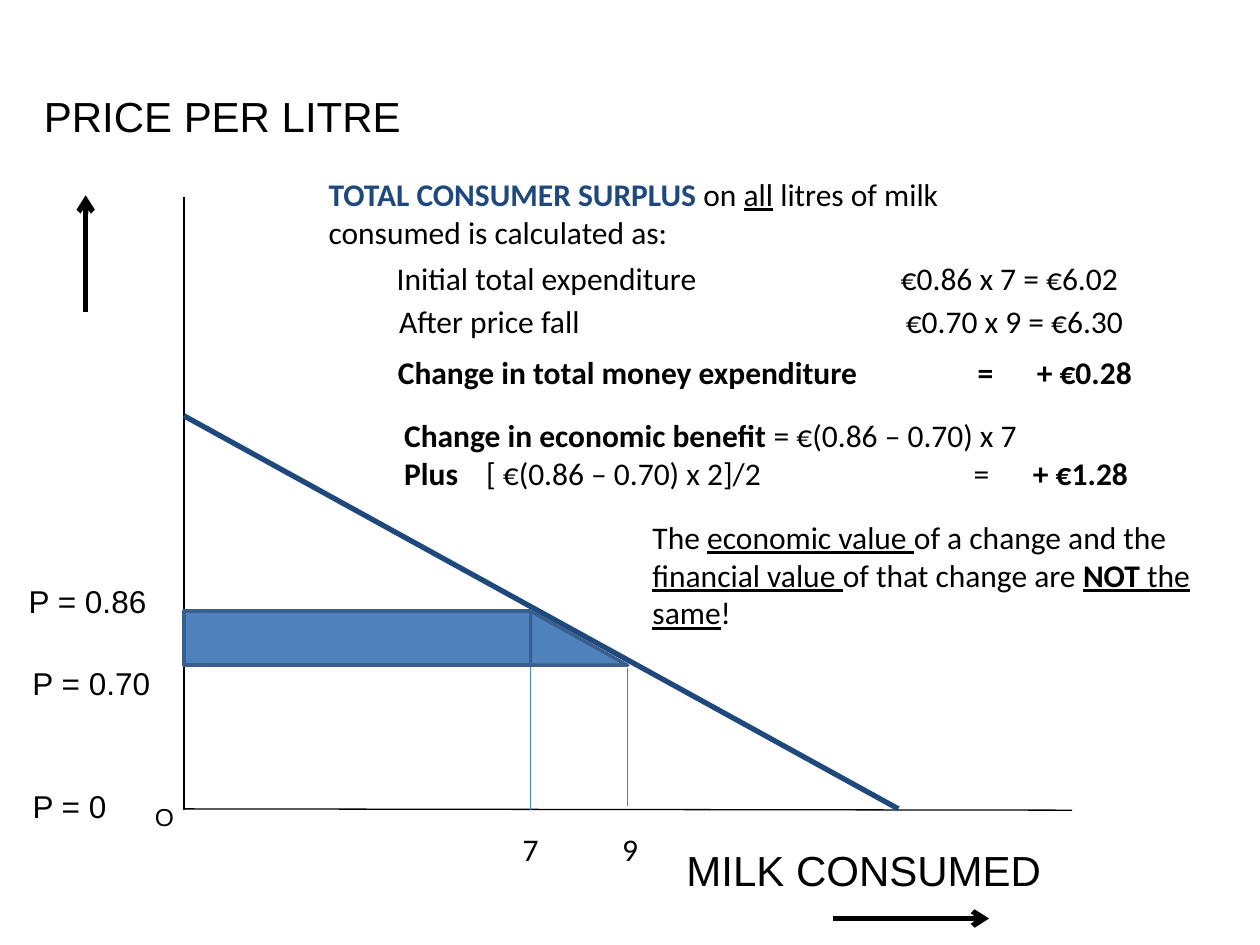
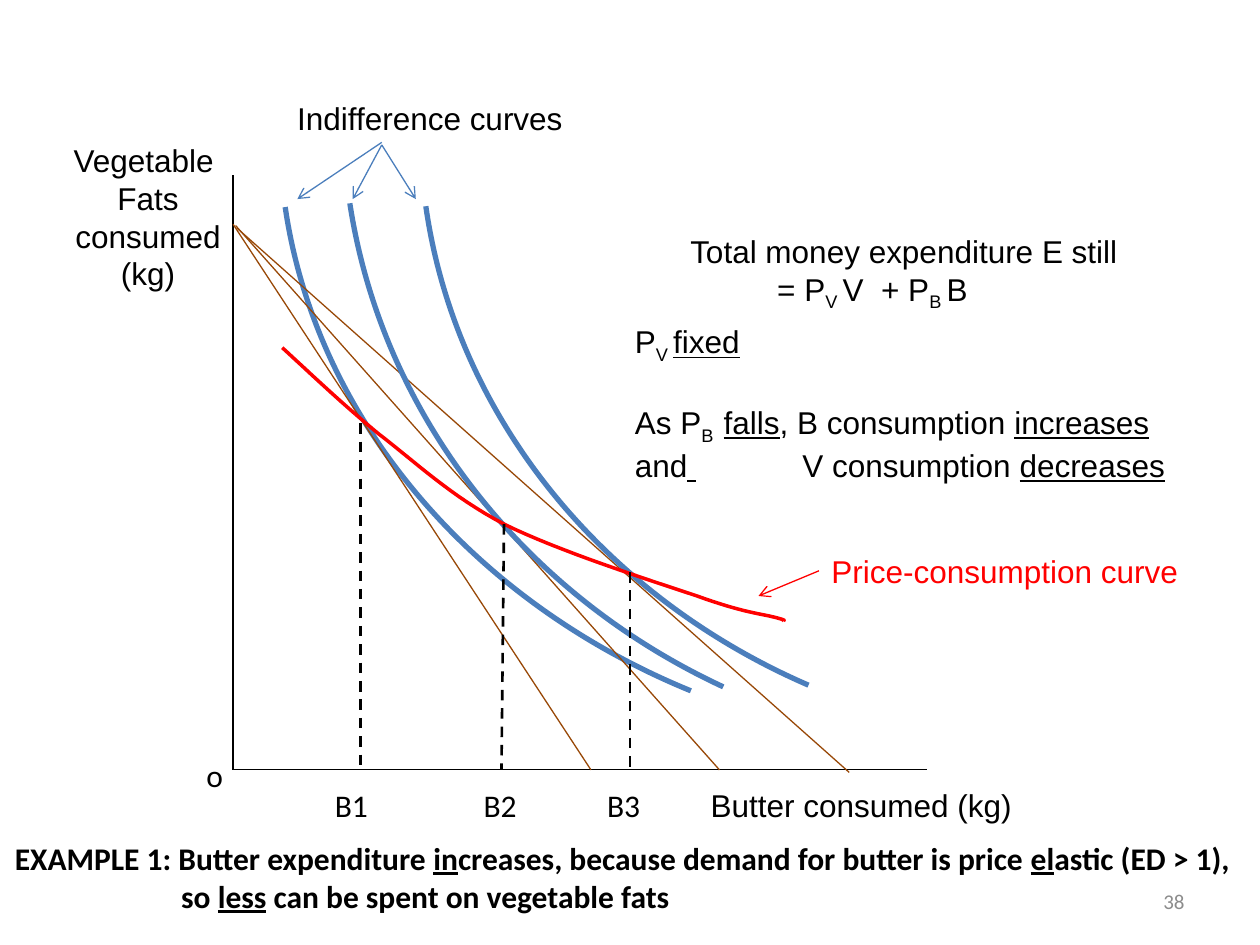
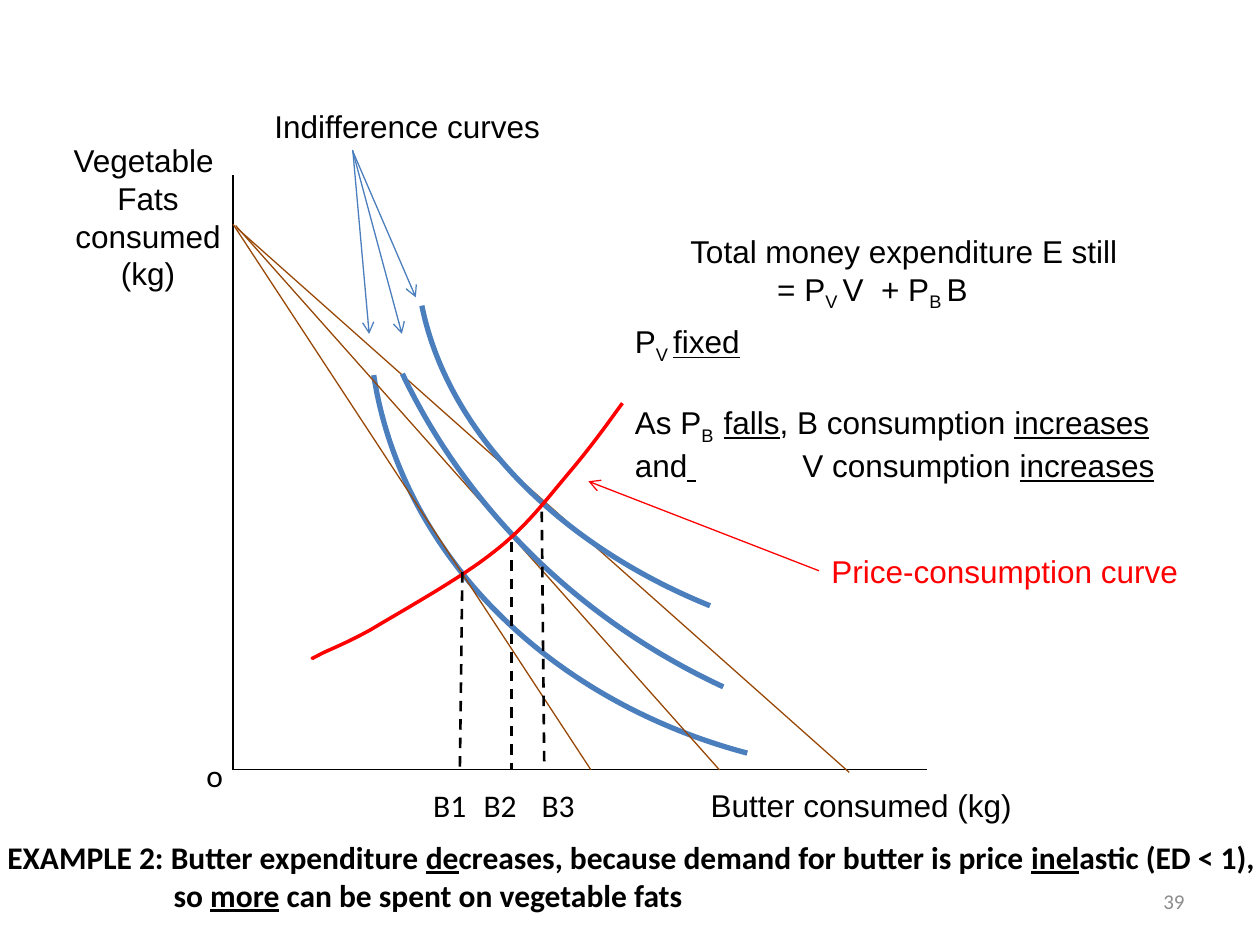
"""Draw three slides on consumer surplus and price-consumption curves."""
from lxml import etree
from pptx import Presentation
from pptx.dml.color import RGBColor
from pptx.enum.dml import MSO_LINE
from pptx.enum.shapes import MSO_CONNECTOR, MSO_SHAPE
from pptx.enum.text import MSO_ANCHOR, MSO_AUTO_SIZE, PP_ALIGN
from pptx.oxml.ns import qn
from pptx.util import Cm, Pt

DASH = MSO_LINE.DASH
STRAIGHT = MSO_CONNECTOR.STRAIGHT
ARC, BLOCK, WEDGE = MSO_SHAPE.ARC, MSO_SHAPE.RECTANGLE, MSO_SHAPE.RIGHT_TRIANGLE
MIDDLE, TOP = MSO_ANCHOR.MIDDLE, MSO_ANCHOR.TOP
GROW, FIXED = MSO_AUTO_SIZE.SHAPE_TO_FIT_TEXT, MSO_AUTO_SIZE.NONE
LEFT, CENTER, RIGHT = PP_ALIGN.LEFT, PP_ALIGN.CENTER, PP_ALIGN.RIGHT

COLORS = {
    "ink": "000000", "navy": "1F497D", "blue": "4B7EBC", "fill": "4F81BD",
    "edge": "3A5F8C", "brown": "984807", "red": "FF0000", "gray": "8C8C8C",
}
MARKS = {"*": "bold", "_": "under", "~": "sub", "^": "navy"}
SANS, BODY = "Arial", "Calibri"
BASE = 6.11
LABEL = 6.19


def inch(value):
    return Cm(value * 2.54)


def color(name):
    return RGBColor.from_string(COLORS[name])


def split(line):
    state, part = set(), ""
    for char in line:
        if char in MARKS:
            if part:
                yield part, state
            state, part = state ^ {MARKS[char]}, ""
        else:
            part += char
    if part:
        yield part, state


class Art:
    def __init__(self):
        self.deck = Presentation()
        self.deck.slide_width, self.deck.slide_height = inch(10), inch(7.5)
        self.shapes = None

    def page(self):
        self.shapes = self.deck.slides.add_slide(self.deck.slide_layouts[6]).shapes

    def text(self, at, text, size=18, font=BODY, tint="ink", align=LEFT, wrap=False,
             anchor=TOP, fit=GROW, indents=(), tabs=(), gaps=()):
        box = self.shapes.add_textbox(*map(inch, at))
        frame = box.text_frame
        frame.word_wrap, frame.auto_size, frame.vertical_anchor = wrap, fit, anchor
        for i, line in enumerate(text.split("\n")):
            para = frame.add_paragraph() if i else frame.paragraphs[0]
            para.alignment = align
            if i < len(gaps):
                para.space_before = Pt(gaps[i])
            props = para._p.get_or_add_pPr()
            if i < len(indents):
                props.set("marL", str(inch(indents[i])))
            if tabs:
                stops = etree.SubElement(props, qn("a:tabLst"))
                for stop in tabs:
                    etree.SubElement(stops, qn("a:tab"), pos=str(inch(stop)), algn="l")
            for part, state in split(line):
                run = para.add_run()
                run.text = part
                style = run.font
                style.size, style.name = Pt(size), font
                style.bold, style.underline = "bold" in state, "under" in state
                style.color.rgb = color("navy" if "navy" in state else tint)
                if "sub" in state:
                    run._r.get_or_add_rPr().set("baseline", "-25000")
        return box

    def pen(self, shape, tint, width):
        shape.line.color.rgb = color(tint)
        shape.line.width = Pt(width)

    def line(self, start, end, tint="ink", width=0.75, dash=None, arrow=False, source=None):
        link = self.shapes.add_connector(STRAIGHT, *map(inch, (*start, *end)))
        self.pen(link, tint, width)
        if dash:
            link.line.dash_style = dash
        if source:
            link.begin_connect(source, 1)
        props = link._element.spPr
        if arrow:
            etree.SubElement(props.find(qn("a:ln")), qn("a:tailEnd"), type="arrow")
        etree.SubElement(props, qn("a:effectLst"))

    def shape(self, kind, at):
        item = self.shapes.add_shape(kind, *map(inch, at))
        item.shadow.inherit = False
        item.fill.solid()
        item.fill.fore_color.rgb = color("fill")
        self.pen(item, "edge", 2)

    def arc(self, at, turn, begin, end):
        item = self.shapes.add_shape(ARC, *map(inch, at))
        item.shadow.inherit = False
        item.rotation = 180 + turn
        item.adjustments[0], item.adjustments[1] = begin, end
        item.fill.background()
        self.pen(item, "blue", 3)

    def curve(self, knots, steps=16):
        dots = []
        for i in range(0, len(knots) - 1, 3):
            a, b, c, d = knots[i:i + 4]
            for step in range(1, steps + 1):
                t = step / steps
                s = 1 - t
                dots.append(tuple(
                    inch(s**3 * p + 3 * s * s * t * q + 3 * s * t * t * r + t**3 * u)
                    for p, q, r, u in zip(a, b, c, d)))
        path = self.shapes.build_freeform(*map(inch, knots[0]))
        path.add_line_segments(dots, close=False)
        item = path.convert_to_shape()
        item.shadow.inherit = False
        item.fill.background()
        self.pen(item, "red", 2)


def surplus(art):
    art.page()
    left, high, low, seven, nine = 1.46, 4.85, 5.28, 4.21, 4.98
    art.line((left, 6.42), (8.51, 6.43))
    art.line((left, 6.43), (left, 1.56))
    art.text((1.13, 6.32, 0.35, 0.34), "O", size=14, font=SANS)
    art.text((5.35, 6.65, 4.14, 0.5), "MILK CONSUMED", size=24, font=SANS, wrap=True)
    art.text((0.25, 0.67, 3.06, 0.5), "PRICE PER LITRE", size=24, font=SANS)
    art.line((6.61, 7.29), (7.85, 7.29), width=3, arrow=True)
    art.line((0.68, 2.48), (0.68, 1.55), width=3, arrow=True)
    art.line((left, 3.3), (7.13, 6.42), tint="navy", width=3)
    for x, y, wide, price in ((0.16, 6.2, 0.79, "0"), (0.13, 4.57, 1.14, "0.86"),
                              (0.16, 5.22, 1.14, "0.70")):
        art.text((x, y, wide, 0.4), f"P = {price}", font=SANS)
    for start, end in (((left, low), (5, low)), ((left, high), (seven, high)),
                       ((nine, 5.3), (nine, 6.4)), ((seven, high), (seven, 6.43))):
        art.line(start, end, tint="blue")
    art.text((4.84, 6.54, 0.33, 0.4), "9")
    art.text((4.05, 6.54, 0.33, 0.4), "7")
    art.shape(WEDGE, (seven, high, nine - seven, low - high))
    art.shape(BLOCK, (left, high, seven - left, low - high))
    art.text((2.51, 1.34, 6.03, 0.71), "*^TOTAL CONSUMER SURPLUS ^*on _all_ litres of milk "
             "consumed is calculated as:", wrap=True)
    for at, text, tabs in (
        ((3.05, 2.01, 5.99, 0.4), "Initial total expenditure\t€0.86 x 7 = €6.02", [4]),
        ((3.07, 2.35, 6.11, 0.4), "After price fall\t€0.70 x 9 = €6.30", [4.02]),
        ((3.06, 2.75, 6.75, 0.4), "*Change in total money expenditure\t=\t+ €0.28*",
         [4.6, 5.07]),
        ((3.11, 3.25, 6.16, 0.71), "*Change in economic benefit *= €(0.86 – 0.70) x 7\n"
         "*Plus*\t[ €(0.86 – 0.70) x 2]/2\t=\t*+ €1.28*", [0.65, 4.52, 4.99]),
    ):
        art.text(at, text, wrap=True, tabs=tabs)
    art.text((5.08, 4.06, 4.55, 1.01), "The _economic value _of a change and the "
             "_financial value _of that change are _*NOT* the same_!", wrap=True)


def choice(art, page, arcs, knots, drops, names, tip, rays, title, aim, trend, note, place):
    art.page()
    art.text((7.17, 6.95, 2.33, 0.4), page, size=12, tint="gray", align=RIGHT,
             wrap=True, anchor=MIDDLE, fit=FIXED)
    art.line((1.85, 1.39), (1.85, BASE))
    art.line((1.85, BASE), (7.36, BASE))
    art.arc(*arcs[0])
    art.text((5.53, LABEL, 2.61, 0.4), "Butter consumed (kg)", font=SANS, align=CENTER)
    art.text((0.35, 1.07, 1.65, 1.31), "Vegetable \nFats\nconsumed\n(kg)", font=SANS,
             align=CENTER, wrap=True)
    art.text((1.54, 5.95, 0.34, 0.4), "o")
    for start, end in (((1.85, 1.78), (4.69, BASE)), ((1.87, 1.79), (5.71, BASE)),
                       ((1.88, 1.81), (6.74, 6.13))):
        art.line(start, end, tint="brown")
    for arc in arcs[1:]:
        art.arc(*arc)
    art.curve(knots)
    for top, foot in drops:
        art.line(top, (foot, BASE), width=1.5, dash=DASH)
    for i, x in enumerate(names, 1):
        art.text((x, LABEL, 0.47, 0.4), f"B{i}")
    for start, end in rays:
        art.line((tip, start), end, tint="blue", arrow=True)
    art.text((*title, 2.33, 0.4), "Indifference curves", font=SANS)
    label = art.text((6.5, 4.33, 2.98, 0.4), "Price-consumption curve", font=SANS, tint="red")
    art.line((6.5, 4.53), aim, tint="red", arrow=True, source=label)
    art.text((5.38, 1.79, 3.78, 0.71), "Total money expenditure E still\n"
             "= P~V ~V  + P~B ~B", font=SANS, wrap=True, indents=(0, 0.69))
    art.text((4.94, 2.51, 4.44, 1.31), "P~V ~_fixed_\n"
             "As P~B  ~_falls_, B consumption _increases_\n"
             f"and_ _\tV consumption _{trend}_",
             font=SANS, wrap=True, tabs=[1.33], gaps=(0, 21.6))
    art.text(place, note, indents=(0, 1.32))


def main():
    art = Art()
    surplus(art)
    choice(
        art, "38",
        arcs=(((2.21, -3.54, 10.88, 9.47), 6.8, 174.01, 209.07),
              ((3.33, -3.64, 10.49, 9.54), 6.8, 173.89, 208.58),
              ((2.72, -4.09, 10.69, 10.06), 4.3, 175.78, 209.07)),
        knots=((2.24, 2.76), (2.48, 2.98), (2.71, 3.2), (3, 3.44), (3.3, 3.67),
               (3.58, 3.94), (4, 4.16), (4.42, 4.37), (5.17, 4.61), (5.53, 4.73),
               (5.89, 4.86), (6.03, 4.87), (6.15, 4.9), (6.26, 4.93), (6.21, 4.92),
               (6.22, 4.93)),
        drops=(((2.86, 3.36), 2.86), ((4, 4.16), 3.98), ((5, 4.54), 5)),
        names=(2.56, 3.74, 4.72), tip=3.03,
        rays=((1.13, (2.36, 1.58)), (1.15, (2.8, 1.58)), (1.15, (3.3, 1.58))),
        title=(2.26, 0.74), aim=(6.02, 4.73), trend="decreases",
        note="*EXAMPLE 1: Butter expenditure _in_creases, because demand for butter is "
             "price _el_astic (ED > 1),*\n*so _less_ can be spent on vegetable fats*",
        place=(0.02, 6.61, 9.94, 0.71))
    choice(
        art, "39",
        arcs=(((2.93, -1.13, 8.53, 7.27), 0, 174.01, 212.18),
              ((3.27, -0.43, 7.69, 5.57), 11.3, 173.89, 208.58),
              ((2.72, -4.09, 10.69, 10.06), 4.3, 175.78, 199.87)),
        knots=((4.94, 3.2), (4.81, 3.38), (4.68, 3.56), (4.51, 3.76), (4.34, 3.96),
               (4.18, 4.18), (3.92, 4.38), (3.66, 4.59), (3.17, 4.86), (2.94, 5),
               (2.7, 5.13), (2.6, 5.16), (2.53, 5.2), (2.45, 5.24), (2.49, 5.22),
               (2.48, 5.23)),
        drops=(((3.67, 4.54), 3.65), ((4.06, 4.3), 4.06), ((4.3, 4.06), 4.32)),
        names=(3.34, 3.74, 4.2), tip=2.8,
        rays=((1.19, (2.93, 2.65)), (1.2, (3.19, 2.65)), (1.2, (3.3, 2.36))),
        title=(2.08, 0.8), aim=(4.67, 3.82), trend="increases",
        note="*EXAMPLE 2: Butter expenditure _de_creases, because demand for butter is "
             "price _inel_astic (ED < 1),*\n*so _more_ can be spent on vegetable fats*",
        place=(-0.04, 6.6, 10.14, 0.71))
    art.deck.save("out.pptx")


if __name__ == "__main__":
    main()
